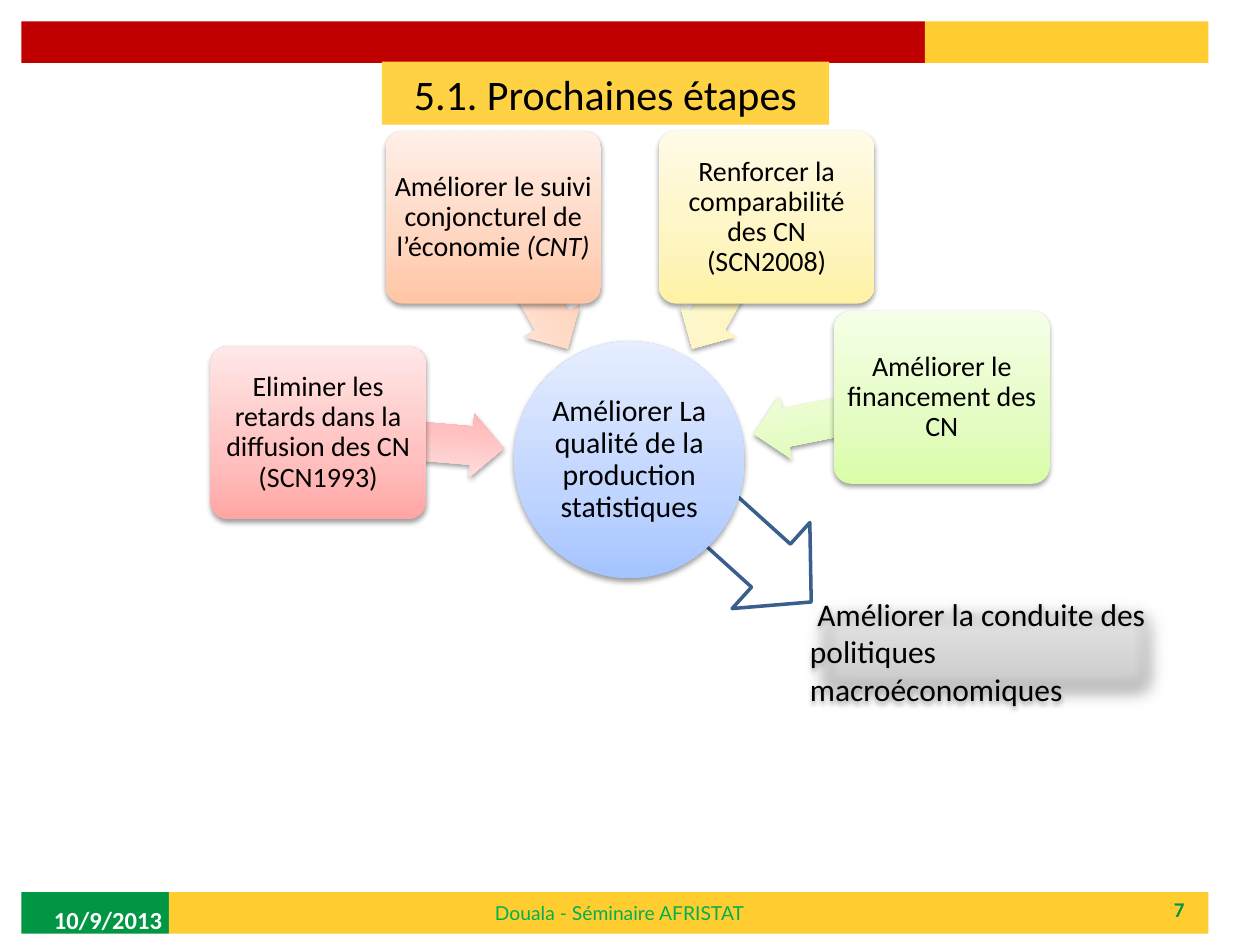
from lxml.etree import SubElement
from pptx import Presentation
from pptx.dml.color import RGBColor
from pptx.enum.shapes import MSO_SHAPE as SHAPE
from pptx.enum.text import MSO_ANCHOR as ANCHOR, PP_ALIGN as ALIGN
from pptx.oxml.ns import qn
from pptx.util import Emu, Inches, Pt

RED = ("FFA6A5", "FFC0BF", "FFE7E7")
ORANGE = ("FFC5A5", "FFD5BF", "FFEFE7")
YELLOW = ("FFF2A5", "FEF5C0", "FFFBE7")
GREEN = ("DAFDA7", "E4FCC2", "F5FFE7")
BLUE = ("A4C4FF", "BFD4FF", "E6EEFF")
GRAY = ("BDBDBD", "D1D1D1", "EEEEEE")
CARD = (1.71, 1.37)
CAUSES = [
    ((1.67, 2.75), (2.52, 3.24, 1.48, 0.51), 184.9, RED,
     [("Eliminer les retards dans la diffusion des CN (SCN1993)", {})]),
    ((3.06, 1.04), (3.61, 1.99, 1.2, 0.51), 240.5, ORANGE,
     [("Améliorer le suivi conjoncturel de l’économie", {}), (" (CNT)", {"italic": True})]),
    ((5.23, 1.04), (5.19, 1.99, 1.2, 0.51), 299.5, YELLOW,
     [("Renforcer la comparabilité des CN (SCN2008)", {})]),
    ((6.62, 2.47), (5.97, 3.04, 1.52, 0.51), 348.7, GREEN,
     [("Améliorer le financement des CN", {})]),
]


def rgb(color):
    """Turn a hex string into a colour."""
    return RGBColor.from_string(color)


def add_shape(s, kind, box, fill, adj=(), rotation=0):
    """Add a preset shape with a plain fill and neither line nor shadow."""
    sp = s.shapes.add_shape(kind, *map(Inches, box))
    for i, value in enumerate(adj):
        sp.adjustments[i] = value
    sp.rotation = rotation
    sp.fill.solid()
    sp.fill.fore_color.rgb = rgb(fill)
    sp.line.fill.background()
    sp.shadow.inherit = False
    return sp


def add_glossy(s, kind, box, colors, adj=(), rotation=0):
    """Add a shape with a three-colour gradient and a soft shadow."""
    sp = add_shape(s, kind, box, colors[0], adj, rotation)
    sp.fill.gradient()
    sp.fill.gradient_angle = 90
    props = sp._element.spPr
    stops = props.find(qn("a:gradFill")).find(qn("a:gsLst"))
    for stop in list(stops):
        stops.remove(stop)
    for pos, color in zip((0, 35, 100), colors):
        stop = SubElement(stops, qn("a:gs"), pos=str(pos * 1000))
        SubElement(stop, qn("a:srgbClr"), val=color)
    shadow = SubElement(props.find(qn("a:effectLst")), qn("a:outerShdw"),
                        blurRad=str(Pt(3.1)), dist=str(Pt(1.6)), dir="5400000", rotWithShape="0")
    black = SubElement(shadow, qn("a:srgbClr"), val="000000")
    SubElement(black, qn("a:alpha"), val="38000")
    return sp


def write(sp, runs, size, color="000000", name="Calibri", bold=False, align=ALIGN.CENTER,
          anchor=ANCHOR.MIDDLE, wrap=True, inset=None, spacing=None):
    """Write one paragraph of runs into a shape and return it."""
    tf = sp.text_frame
    tf.word_wrap, tf.vertical_anchor = wrap, anchor
    if inset is not None:
        for side in ("left", "right", "top", "bottom"):
            setattr(tf, f"margin_{side}", Inches(inset))
    p = tf.paragraphs[0]
    p.alignment, p.line_spacing = align, spacing
    for text, extra in runs:
        r = p.add_run()
        r.text = text
        r.font.color.rgb = rgb(color)
        for key, value in {"size": Pt(size), "name": name, "bold": bold, **extra}.items():
            setattr(r.font, key, value)
    return p


def add_label(s, box, text, size, color, **format_values):
    """Add a text box holding one line."""
    sp = s.shapes.add_textbox(*map(Inches, box))
    write(sp, [(text, {})], size, color, **format_values)


def add_band(s, left, top, parts):
    """Place touching coloured strips in a row."""
    for width, color in parts:
        add_shape(s, SHAPE.RECTANGLE, (left, top, width, 0.33), color)
        left += width


def add_header(s, box):
    """Place the top band and the title."""
    left, top = box
    add_band(s, left, top, [(7.17, "C00000"), (2.25, "FFCD2F")])
    title = add_shape(s, SHAPE.RECTANGLE, (left + 2.86, top + 0.32, 3.55, 0.5), "FFD243")
    write(title, [("5.1. Prochaines étapes", {})], 24)


def add_footer(s, box):
    """Place the bottom band, date, event and page number."""
    left, top = box
    add_band(s, left, top, [(1.17, "009644"), (8.25, "FFCD2F")])
    add_label(s, (left + 7, top, 2.33, 0.27), "7", 12, "009644", bold=True, align=ALIGN.RIGHT)
    add_label(s, (left + 0.16, top + 0.02, 2.33, 0.4), "10/9/2013", 14, "FFFFFF",
              bold=True, align=ALIGN.LEFT)
    add_label(s, (left + 3.66, top + 0.02, 2.23, 0.29), "Douala - Séminaire AFRISTAT", 11,
              "00B050", name="Lato", align=ALIGN.LEFT, anchor=ANCHOR.TOP, wrap=False)


def add_cause(s, box, arrow_box, rotation, colors, runs):
    """Place a card and the arrow that leads from it to the hub."""
    add_glossy(s, SHAPE.LEFT_ARROW, arrow_box, colors, (0.6, 0.5), rotation)
    card = add_glossy(s, SHAPE.ROUNDED_RECTANGLE, box, colors, (0.1,))
    write(card, runs, 16, inset=0.03, spacing=0.9)


def add_diagram(s, hub_box):
    """Place the hub, its outgoing arrow and the surrounding cards."""
    left, top = hub_box[:2]
    arrow = add_shape(s, SHAPE.DOWN_ARROW, (left + 1.42, top + 0.99, 0.92, 1.29), "FFFFFF",
                      (0.5, 0.468), 312.1)
    arrow.line.color.rgb = rgb("3A5F8C")
    arrow.line.width = Pt(2)
    hub = add_glossy(s, SHAPE.OVAL, hub_box, BLUE)
    write(hub, [("Améliorer La qualité de la production statistiques", {})], 17,
          inset=0.01, spacing=0.9)
    for corner, *cause in CAUSES:
        add_cause(s, corner + CARD, *cause)


def add_outcome(s, box):
    """Place the soft-edged box with the final goal."""
    sp = add_glossy(s, SHAPE.RECTANGLE, box, GRAY)
    effects = sp._element.spPr.find(qn("a:effectLst"))
    SubElement(effects, qn("a:softEdge"), rad=str(Pt(12.5)))
    p = write(sp, [("Améliorer la conduite des politiques macroéconomiques", {})], 18,
              align=ALIGN.LEFT, anchor=ANCHOR.TOP)
    p._p.get_or_add_pPr().set("indent", str(Emu(Inches(0.06))))


def main():
    """Build and save the slide."""
    prs = Presentation()
    prs.slide_width, prs.slide_height = Inches(10), Inches(7.5)
    s = prs.slides.add_slide(prs.slide_layouts[6])
    add_footer(s, (0.17, 7.08))
    add_header(s, (0.17, 0.17))
    add_diagram(s, (4.08, 2.71, 1.83, 1.88))
    add_outcome(s, (6.33, 4.67, 3, 1.01))
    prs.save("out.pptx")


if __name__ == "__main__":
    main()
